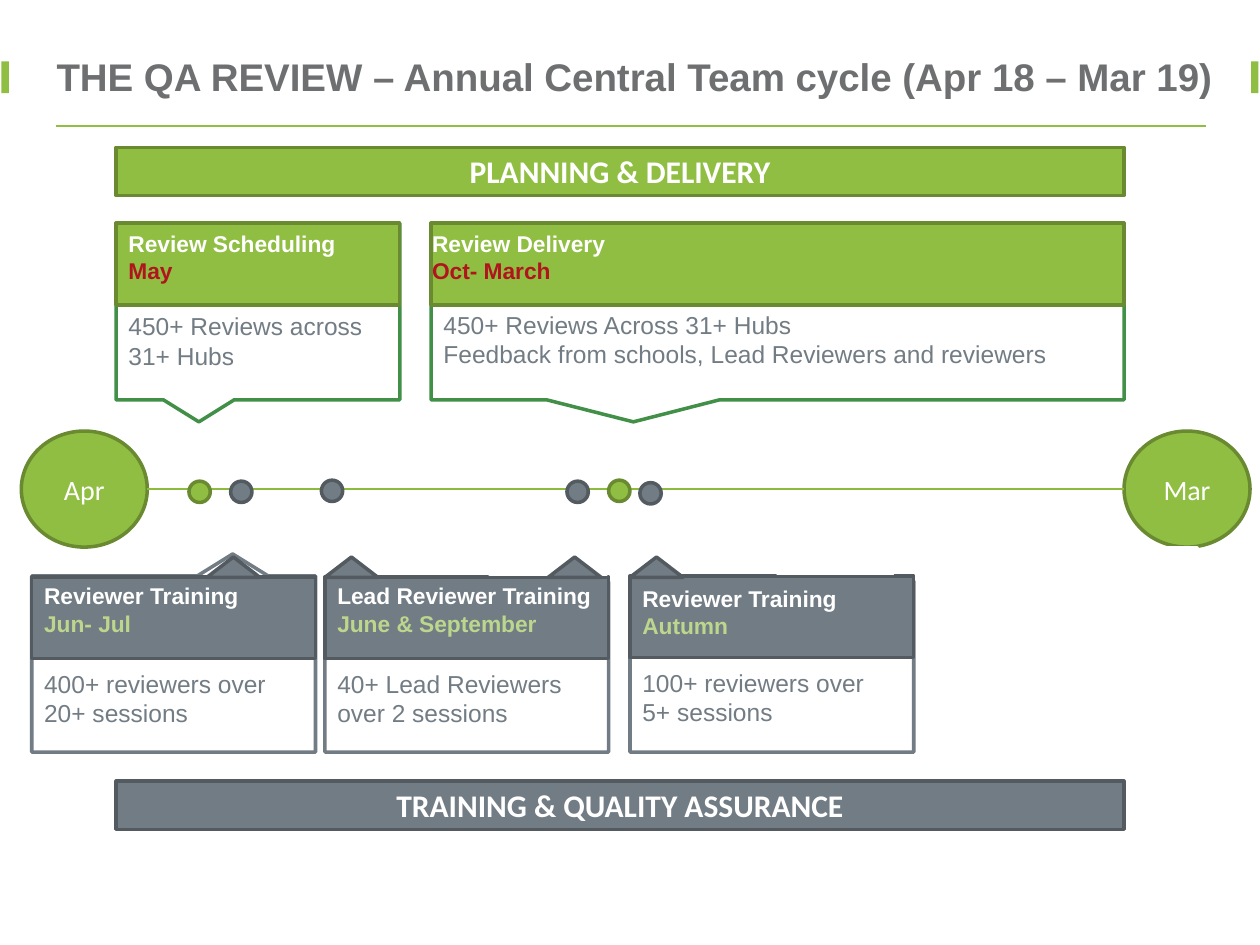
from lxml.etree import SubElement
from pptx import Presentation
from pptx.dml.color import RGBColor
from pptx.enum.shapes import MSO_CONNECTOR, MSO_SHAPE
from pptx.enum.text import MSO_ANCHOR, PP_ALIGN
from pptx.oxml.ns import qn
from pptx.util import Cm, Pt

WHITE = RGBColor(0xFF, 0xFF, 0xFF)
GREEN = RGBColor(0x90, 0xBE, 0x43)
DARK_GREEN = RGBColor(0x69, 0x8A, 0x30)
CALLOUT_GREEN = RGBColor(0x42, 0x8F, 0x47)
TIMELINE_GREEN = RGBColor(0x8C, 0xBC, 0x3E)
PALE_GREEN = RGBColor(0xBC, 0xD7, 0x8D)
GRAY = RGBColor(0x72, 0x7C, 0x84)
DARK_GRAY = RGBColor(0x53, 0x5A, 0x60)
TITLE_GRAY = RGBColor(0x6D, 0x6F, 0x71)
RED = RGBColor(0xB0, 0x15, 0x1D)

HEADER_HEIGHT = 1.65
CARD_WIDTH = 5.72
LOWER_CARD_BOTTOM = 15.16


class CycleSlide:
    def __init__(self, slide):
        self.slide = slide
        self.heading_font = "Arial"
        self.label_font = "Calibri"
        self.line_width = Pt(2)

    def style(self, paragraph, font_name, size, color, bold=False):
        font = paragraph.font
        font.name, font.size, font.bold = font_name, Pt(size), bold
        font.color.rgb = color

    def shape(self, kind, left, top, width, height, fill, line=None):
        shape = self.slide.shapes.add_shape(kind, Cm(left), Cm(top), Cm(width), Cm(height))
        shape.shadow.inherit = False
        shape.fill.solid()
        shape.fill.fore_color.rgb = fill
        if line is None:
            shape.line.fill.background()
        else:
            shape.line.color.rgb = line
            shape.line.width = self.line_width
        return shape

    def label(self, shape, text, size, bold=False):
        frame = shape.text_frame
        frame.vertical_anchor = MSO_ANCHOR.MIDDLE
        paragraph = frame.paragraphs[0]
        paragraph.text = text
        paragraph.alignment = PP_ALIGN.CENTER
        self.style(paragraph, self.label_font, size, WHITE, bold)

    def text(self, left, top, width, height, lines, size, colors, bold=False, inset=True):
        """Write one paragraph for each line, with its own colour."""
        box = self.slide.shapes.add_textbox(Cm(left), Cm(top), Cm(width), Cm(height))
        frame = box.text_frame
        frame.word_wrap = True
        if not inset:
            frame.margin_left = frame.margin_right = 0
            frame.margin_top = frame.margin_bottom = 0
        for index, (line, color) in enumerate(zip(lines, colors)):
            paragraph = frame.add_paragraph() if index else frame.paragraphs[0]
            paragraph.text = line
            self.style(paragraph, self.heading_font, size, color, bold)

    def line(self, left, right, y, color, width):
        connector = self.slide.shapes.add_connector(
            MSO_CONNECTOR.STRAIGHT, Cm(left), Cm(y), Cm(right), Cm(y))
        connector.line.color.rgb = color
        connector.line.width = Pt(width)
        SubElement(connector._element.spPr, qn("a:effectLst"))

    def month(self, left, name):
        circle = self.shape(MSO_SHAPE.OVAL, left, 8.69, 2.54, 2.34, GREEN, DARK_GREEN)
        self.label(circle, name, 16)

    def dot(self, left, top, fill, line):
        self.shape(MSO_SHAPE.OVAL, left, top, 0.43, 0.43, fill, line)

    def callout(self, left, top, width, height, line, rotation=0):
        callout = self.shape(MSO_SHAPE.RECTANGULAR_CALLOUT, left, top, width, height, WHITE, line)
        callout.adjustments[0] = -0.208
        callout.adjustments[1] = 0.625
        callout.rotation = rotation

    def card_text(self, left, heading_left, width, heading_top, body_top, heading, date_color, body):
        self.text(heading_left, heading_top, width, 1.37, heading, 13, (WHITE, date_color), bold=True)
        self.text(left, body_top, width, 1.45, body, 14, [GRAY] * len(body))

    def upper_card(self, left, heading_left, width, body_top, heading, body):
        top = 4.5
        self.callout(left, top, width, 3.56, CALLOUT_GREEN)
        self.shape(MSO_SHAPE.RECTANGLE, left, top, width, HEADER_HEIGHT, GREEN, DARK_GREEN)
        self.card_text(left, heading_left, width, top, body_top, heading, RED, body)

    def lower_card(self, left, callout_top, header_top, heading_top, body_top, pointer_left, heading, body):
        self.callout(left, callout_top, CARD_WIDTH, LOWER_CARD_BOTTOM - callout_top, GRAY, 180)
        self.shape(MSO_SHAPE.RECTANGLE, left, header_top, CARD_WIDTH, HEADER_HEIGHT, GRAY, DARK_GRAY)
        self.pointer(pointer_left)
        self.card_text(left, left, CARD_WIDTH, heading_top, body_top, heading, PALE_GREEN, body)

    def pointer(self, left):
        self.shape(MSO_SHAPE.ISOSCELES_TRIANGLE, left, 11.23, 1.07, 0.41, GRAY, DARK_GRAY)

    def cover(self, left, top):
        """Hide the callout tip or circle edge behind a white patch."""
        self.shape(MSO_SHAPE.RECTANGLE, left, top, 2.34, 0.48, WHITE, WHITE)

    def banner(self, top, text, fill, line):
        banner = self.shape(MSO_SHAPE.RECTANGLE, 2.34, top, 20.32, 0.97, fill, line)
        self.label(banner, text, 18, bold=True)


def main():
    presentation = Presentation()
    presentation.slide_width, presentation.slide_height = Cm(25.4), Cm(19.05)
    cycle = CycleSlide(presentation.slides.add_slide(presentation.slide_layouts[6]))

    cycle.line(1.12, 24.31, 2.54, GREEN, 1)
    for left in (0.03, 25.22):
        cycle.shape(MSO_SHAPE.RECTANGLE, left, 1.24, 0.15, 0.64, GREEN)
    cycle.text(1.14, 1.07, 23.62, 1.04,
               ["THE QA REVIEW – Annual Central Team cycle (Apr 18 – Mar 19)"],
               22, [TITLE_GRAY], bold=True, inset=False)
    cycle.banner(2.97, "PLANNING & DELIVERY", GREEN, DARK_GREEN)
    cycle.banner(15.75, "TRAINING & QUALITY ASSURANCE", GRAY, DARK_GRAY)

    cycle.month(0.43, "Apr")
    cycle.month(22.66, "Mar")
    cycle.line(2.97, 22.66, 9.86, TIMELINE_GREEN, 0.75)
    for left, top in ((3.81, 9.7), (12.27, 9.68)):
        cycle.dot(left, top, GREEN, DARK_GREEN)
    for left, top in ((4.65, 9.7), (6.48, 9.68), (11.43, 9.7), (12.9, 9.73)):
        cycle.dot(left, top, GRAY, DARK_GRAY)

    cycle.upper_card(2.34, 2.34, CARD_WIDTH, 6.15, ("Review Scheduling", "May"),
                     ("450+ Reviews across", "31+ Hubs"))
    cycle.upper_card(8.69, 8.46, 13.97, 6.12, ("Review Delivery", "Oct- March"),
                     ("450+ Reviews Across 31+ Hubs",
                      "Feedback from schools, Lead Reviewers and reviewers"))

    cycle.lower_card(0.64, 11.61, 11.63, 11.61, 13.36, 4.17, ("Reviewer Training", "Jun- Jul"),
                     ("400+ reviewers over", "20+ sessions"))
    cycle.lower_card(6.55, 11.73, 11.63, 11.61, 13.36, 6.55,
                     ("Lead Reviewer Training", "June & September"),
                     ("40+ Lead Reviewers over 2 sessions",))
    cycle.cover(9.88, 11.1)
    cycle.pointer(11.05)
    cycle.lower_card(12.7, 11.71, 11.61, 11.66, 13.34, 12.7, ("Reviewer Training", "Autumn"),
                     ("100+ reviewers over", "5+ sessions"))
    cycle.cover(15.67, 11.07)
    cycle.cover(21.79, 11.05)

    presentation.save("out.pptx")


if __name__ == "__main__":
    main()
